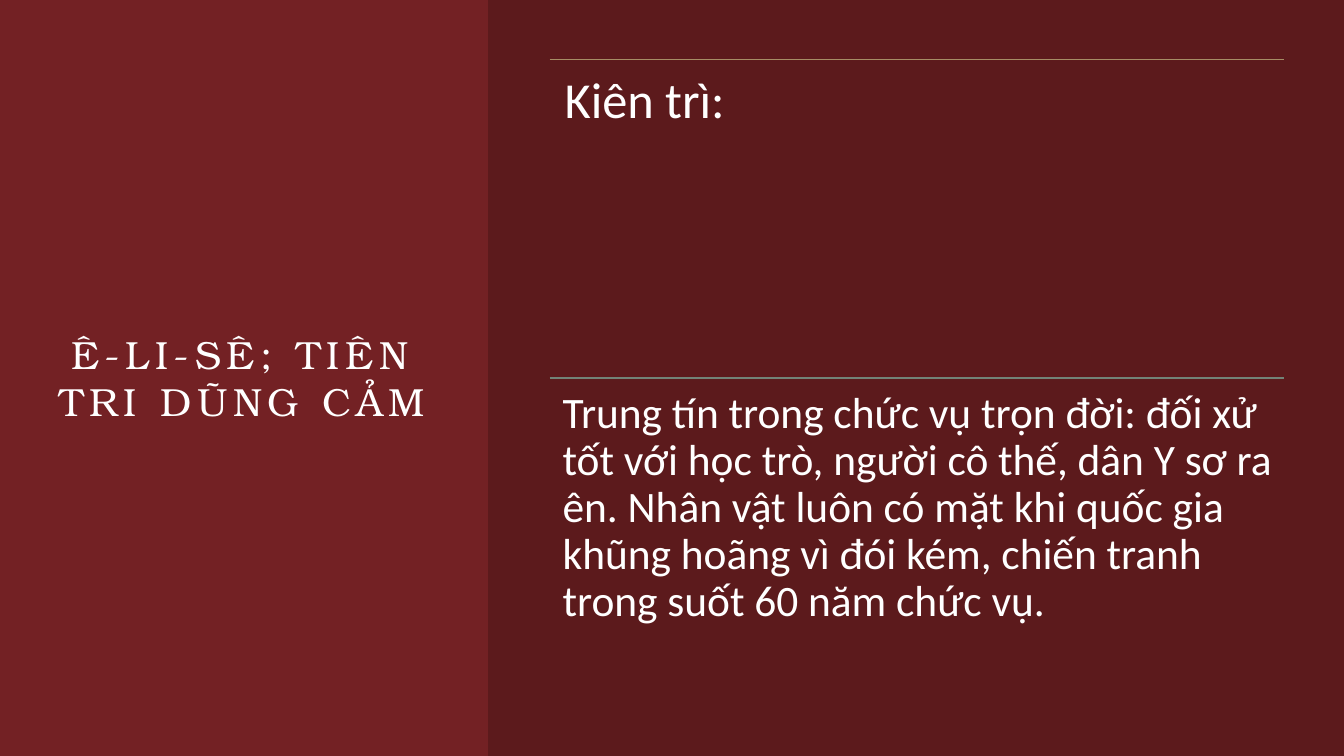
from dataclasses import dataclass

from lxml import etree
from pptx import Presentation
from pptx import util as u
from pptx.dml.color import RGBColor
from pptx.enum import shapes, text
from pptx.oxml import ns


@dataclass(frozen=True)
class Theme:
    background: str = "732124"
    panel: str = "000000"
    ink: str = "FFFFFF"
    gold: str = "A68D65"
    sage: str = "728377"
    title_font: str = "TeX Gyre Bonum"
    body_font: str = "Calibri"
    title_size: int = 28
    heading_size: int = 36
    body_size: int = 31


theme = Theme()


def add_text(slide, box, inset, words, font, size):
    shape = slide.shapes.add_textbox(*map(u.Inches, box))
    frame = shape.text_frame
    frame.word_wrap = True
    frame.margin_left = frame.margin_right = u.Inches(inset)
    frame.margin_top = frame.margin_bottom = u.Inches(inset)
    paragraph = frame.paragraphs[0]
    run = paragraph.add_run()
    run.text = words
    run.font.name = font
    run.font.size = u.Pt(size)
    run.font.color.rgb = RGBColor.from_string(theme.ink)
    return frame, paragraph, run


presentation = Presentation()
presentation.slide_width = u.Inches(13.33)
presentation.slide_height = u.Inches(7.5)
slide = presentation.slides.add_slide(presentation.slide_layouts[6])
slide.background.fill.solid()
slide.background.fill.fore_color.rgb = RGBColor.from_string(theme.background)

frame, paragraph, run = add_text(
    slide, (0.59, 1.18, 3.63, 5.13), 0, "Ê-LI-SÊ; TIÊN TRI DŨNG CẢM",
    theme.title_font, theme.title_size)
frame.vertical_anchor = text.MSO_ANCHOR.MIDDLE
paragraph.alignment = text.PP_ALIGN.CENTER
run.font._element.set("spc", "400")

panel = slide.shapes.add_shape(
    shapes.MSO_SHAPE.RECTANGLE, u.Inches(4.84), 0, u.Inches(8.49), u.Inches(7.5))
panel.shadow.inherit = False
panel.line.fill.background()
panel.fill.solid()
panel.fill.fore_color.rgb = RGBColor.from_string(theme.panel)
panel_color = panel.fill._xPr.find(".//" + ns.qn("a:srgbClr"))
etree.SubElement(panel_color, ns.qn("a:alpha")).set("val", "20000")

left, top, width, height = 5.45, 0.59, 7.29, 3.16
sections = [
    ("Kiên trì:", theme.heading_size, 0.15, theme.gold),
    ("Trung tín trong chức vụ trọn đời: đối xử tốt với học trò, người cô thế, "
     "dân Y sơ ra ên. Nhân vật luôn có mặt khi quốc gia khũng hoãng vì đói kém, "
     "chiến tranh trong suốt 60 năm chức vụ.", theme.body_size, 0.13, theme.sage),
]
for index, (words, size, inset, color) in enumerate(sections):
    section_top = top + index * height
    rule = slide.shapes.add_connector(
        shapes.MSO_CONNECTOR.STRAIGHT, u.Inches(left), u.Inches(section_top),
        u.Inches(left + width), u.Inches(section_top))
    rule.line.color.rgb = RGBColor.from_string(color)
    rule.line.width = u.Pt(0.75)
    etree.SubElement(rule._element.spPr, ns.qn("a:effectLst"))
    frame, paragraph, run = add_text(
        slide, (left, section_top, width, height), inset, words,
        theme.body_font, size)
    paragraph.line_spacing = 0.9

presentation.save("out.pptx")
